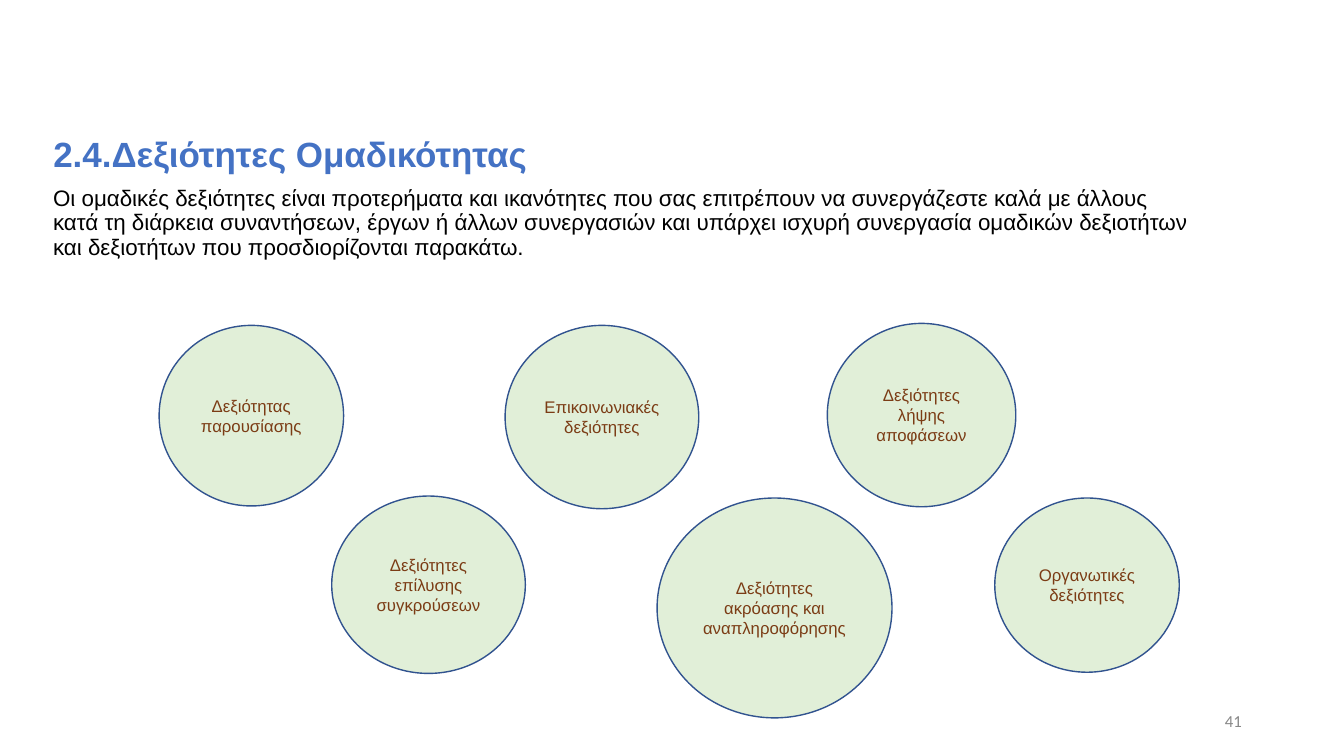
from pptx import Presentation
from pptx.dml.color import RGBColor
from pptx.enum import shapes, text
from pptx.util import Cm, Pt

HEAD = "2.4.Δεξιότητες Ομαδικότητας"
BODY = (
    "Οι ομαδικές δεξιότητες είναι προτερήματα και ικανότητες που σας "
    "επιτρέπουν να συνεργάζεστε καλά με άλλους κατά τη διάρκεια "
    "συναντήσεων, έργων ή άλλων συνεργασιών και υπάρχει ισχυρή συνεργασία "
    "ομαδικών δεξιοτήτων και δεξιοτήτων που προσδιορίζονται παρακάτω."
)
SKILLS = [
    ("Δεξιότητας παρουσίασης", 4.01, 8.2, 4.65, 4.55),
    ("Επικοινωνιακές δεξιότητες", 12.73, 8.2, 4.88, 4.62),
    ("Δεξιότητες λήψης αποφάσεων", 20.85, 8.15, 4.75, 4.62),
    ("Δεξιότητες επίλυσης συγκρούσεων", 8.36, 12.5, 4.88, 4.47),
    ("Δεξιότητες ακρόασης και αναπληροφόρησης", 16.56, 12.55, 5.92, 5.54),
    ("Οργανωτικές δεξιότητες", 25.07, 12.55, 4.65, 4.39),
]
LEFT, WIDTH = 1.09, 29.21
ALIGN = text.PP_ALIGN
ANCHOR = text.MSO_ANCHOR


def color(code):
    return RGBColor.from_string(code)


def write(shape, words, size, code, font="Arial", bold=False,
          align=ALIGN.LEFT, anchor=ANCHOR.TOP, space=1.0):
    frame = shape.text_frame
    frame.text = words
    frame.word_wrap = True
    frame.auto_size = text.MSO_AUTO_SIZE.NONE
    frame.vertical_anchor = anchor
    para = frame.paragraphs[0]
    para.alignment = align
    para.line_spacing = space
    para.space_before = Pt(0)
    face = para.runs[0].font
    face.name, face.size, face.bold = font, Pt(size), bold
    face.color.rgb = color(code)


def main():
    deck = Presentation()
    deck.slide_width, deck.slide_height = Cm(33.87), Cm(19.05)
    slide = deck.slides.add_slide(deck.slide_layouts[5])

    title = slide.shapes.title
    title.left, title.top = Cm(LEFT), Cm(3.33)
    title.width, title.height = Cm(WIDTH), Cm(1.27)
    write(title, HEAD, 25, "4472C4", bold=True, space=0.9)

    body = slide.shapes.add_textbox(Cm(LEFT), Cm(4.6), Cm(WIDTH), Cm(2.2))
    write(body, BODY, 16, "000000", space=0.9)

    for name, *area in SKILLS:
        oval = slide.shapes.add_shape(shapes.MSO_SHAPE.OVAL, *map(Cm, area))
        oval.shadow.inherit = False
        oval.fill.solid()
        oval.fill.fore_color.rgb = color("E1EFD8")
        oval.line.color.rgb = color("31538F")
        oval.line.width = Pt(1)
        write(oval, name, 12, "7B3C15", align=ALIGN.CENTER,
              anchor=ANCHOR.MIDDLE)

    page = slide.shapes.add_textbox(Cm(23.93), Cm(17.65), Cm(7.62), Cm(1.02))
    write(page, "41", 12, "888888", font="Calibri", align=ALIGN.RIGHT,
          anchor=ANCHOR.MIDDLE)

    deck.save("out.pptx")


if __name__ == "__main__":
    main()
